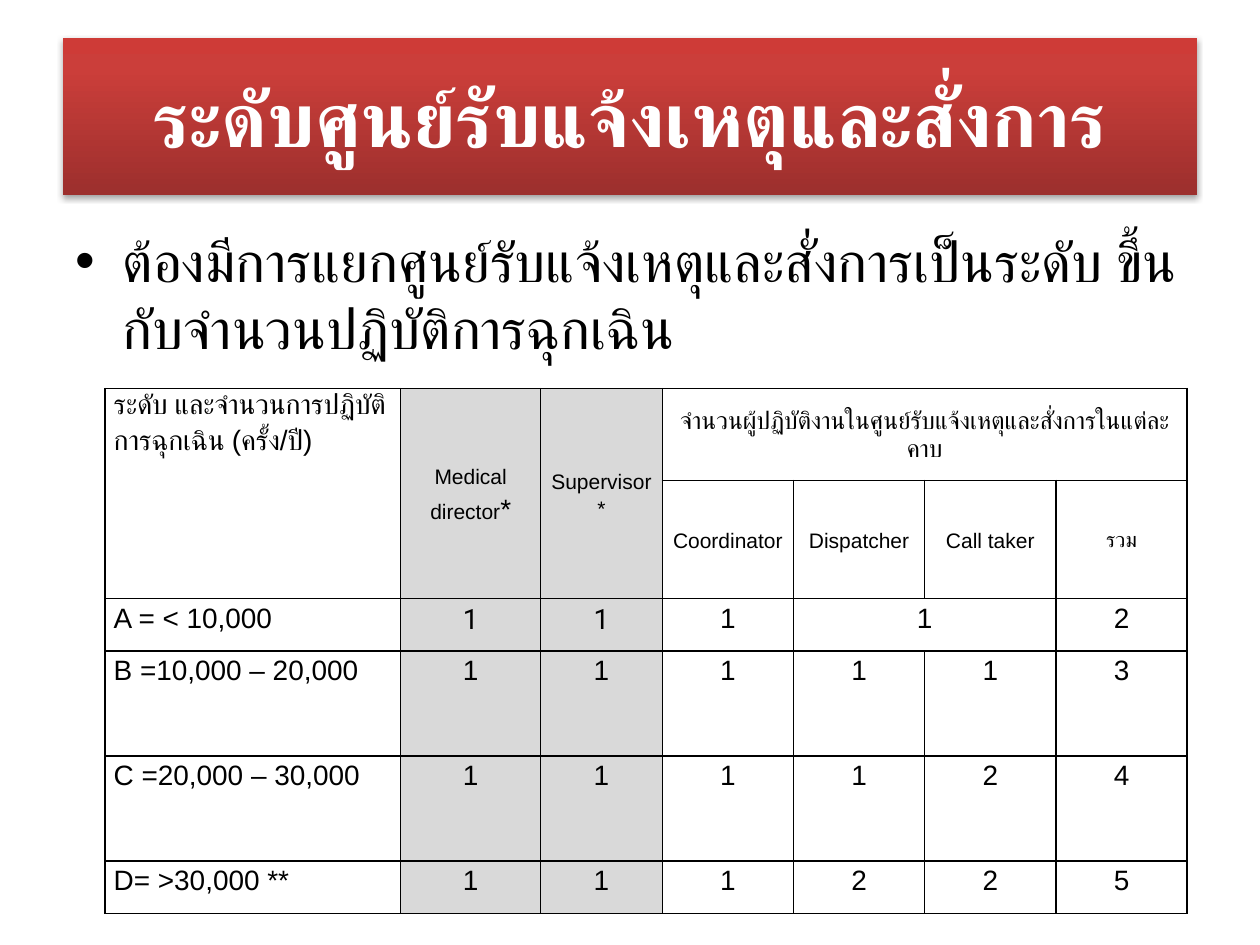
from lxml import etree
from pptx import Presentation
from pptx.dml.color import RGBColor
from pptx.enum.text import MSO_ANCHOR, PP_ALIGN
from pptx.oxml import parse_xml
from pptx.oxml.ns import nsdecls, qn
from pptx.util import Pt

LEFT, CENTER = PP_ALIGN.LEFT, PP_ALIGN.CENTER
TOP, MIDDLE = MSO_ANCHOR.TOP, MSO_ANCHOR.MIDDLE
COLORS = {"black": "000000", "white": "FFFFFF", "gray": "D9D9D9",
          "red_dark": "9C2F2D", "red": "CB3E3A", "red_light": "CE3B37"}


def add_run(p, text, size, font, color="black", bold=False):
    r = p.add_run()
    r.text = text
    for name, value in {"size": Pt(size), "name": font, "bold": bold}.items():
        setattr(r.font, name, value)
    r.font.color.rgb = RGBColor.from_string(COLORS[color])


def add_borders(cell):
    tcPr = cell._tc.get_or_add_tcPr()
    for side in ("lnL", "lnR", "lnT", "lnB"):
        tcPr.append(parse_xml(
            f'<a:{side} {nsdecls("a")} w="{Pt(1)}"><a:solidFill>'
            f'<a:srgbClr val="{COLORS["black"]}"/></a:solidFill></a:{side}>'))


prs = Presentation()
prs.slide_width, prs.slide_height = Pt(720), Pt(540)
s = prs.slides.add_slide(prs.slide_layouts[5])

title = s.shapes.title
for name, value in {"left": 36, "top": 21.6, "width": 648, "height": 90}.items():
    setattr(title, name, Pt(value))
stops = "".join(
    f'<a:gs pos="{pos * 1000}"><a:srgbClr val="{COLORS[color]}"/></a:gs>'
    for pos, color in ((0, "red_dark"), (80, "red"), (100, "red_light")))
spPr = title._element.spPr
spPr.append(parse_xml(
    f'<a:prstGeom {nsdecls("a")} prst="rect"><a:avLst/></a:prstGeom>'))
spPr.append(parse_xml(
    f'<a:gradFill {nsdecls("a")} rotWithShape="1"><a:gsLst>{stops}</a:gsLst>'
    '<a:lin ang="16200000" scaled="0"/></a:gradFill>'))
spPr.append(parse_xml(
    f'<a:effectLst {nsdecls("a")}><a:outerShdw blurRad="{Pt(3.1)}" dist="{Pt(1.8)}" '
    f'dir="5400000" rotWithShape="0"><a:srgbClr val="{COLORS["black"]}">'
    '<a:alpha val="35000"/></a:srgbClr></a:outerShdw></a:effectLst>'))
tf = title.text_frame
tf.vertical_anchor = MIDDLE
p = tf.paragraphs[0]
p.alignment = CENTER
add_run(p, "ระดับศูนย์รับแจ้งเหตุและสั่งการ", 44, "Calibri", "white", True)

body = s.shapes.add_textbox(Pt(36), Pt(126), Pt(648), Pt(356.4))
tf = body.text_frame
tf.word_wrap = True
p = tf.paragraphs[0]
p.space_before = Pt(6.4)
add_run(p, "ต้องมีการแยกศูนย์รับแจ้งเหตุและสั่งการเป็นระดับ ขึ้นกับจำนวนปฏิบัติการฉุกเฉิน",
        32, "Calibri")
pPr = p._p.get_or_add_pPr()
pPr.set("marL", str(Pt(27)))
pPr.set("indent", str(-Pt(27)))
etree.SubElement(pPr, qn("a:buFont")).set("typeface", "Arial")
etree.SubElement(pPr, qn("a:buChar")).set("char", "•")

widths = [169, 80, 69.5] + [75] * 4
heights = [52.5, 67.5, 30, 60, 60, 30]
frame = s.shapes.add_table(len(heights), len(widths), Pt(60), Pt(222),
                           Pt(sum(widths)), Pt(sum(heights)))
table = frame.table
table.first_row = table.horz_banding = False
for column, width in zip(table.columns, widths):
    column.width = Pt(width)
for row, height in zip(table.rows, heights):
    row.height = Pt(height)

headers = {
    (0, 0): [("ระดับ และจำนวนการปฏิบัติการฉุกเฉิน", 16, "Roboto"),
             (" (ครั้ง/ปี)", 16, "Arial")],
    (0, 1): [("Medical director", 12, "Arial"), ("*", 16, "Arial")],
    (0, 2): [("Supervisor*", 12, "Arial")],
    (0, 3): [("จำนวนผู้ปฏิบัติงานในศูนย์รับแจ้งเหตุและสั่งการในแต่ละคาบ", 14, "Roboto")],
    (1, 3): [("Coordinator", 12, "Arial")],
    (1, 4): [("Dispatcher", 12, "Arial")],
    (1, 5): [("Call taker", 12, "Arial")],
    (1, 6): [("รวม", 12, "Roboto")],
}
levels = [
    ("A = < 10,000", "1", "1", "1", "1", "", "2"),
    ("B =10,000 – 20,000", "1", "1", "1", "1", "1", "3"),
    ("C =20,000 – 30,000", "1", "1", "1", "1", "2", "4"),
    ("D= >30,000 **", "1", "1", "1", "2", "2", "5"),
]
contents = dict(headers)
for i, level in enumerate(levels, 2):
    for j, text in enumerate(level):
        if text:
            font = "Roboto" if i == 2 and j in (1, 2) else "Arial"
            contents[i, j] = [(text, 16, font)]

for first, last in (((0, 0), (1, 0)), ((0, 1), (1, 1)), ((0, 2), (1, 2)),
                    ((0, 3), (0, 6)), ((2, 4), (2, 5))):
    table.cell(*first).merge(table.cell(*last))

for i in range(len(heights)):
    for j in range(len(widths)):
        cell = table.cell(i, j)
        add_borders(cell)
        if j in (1, 2):
            cell.fill.solid()
            cell.fill.fore_color.rgb = RGBColor.from_string(COLORS["gray"])
        else:
            cell.fill.background()
        anchor = MIDDLE if i < 2 and j else TOP
        for name, value in {"margin_left": Pt(5), "margin_right": Pt(5), "margin_top": 0,
                            "margin_bottom": 0, "vertical_anchor": anchor}.items():
            setattr(cell, name, value)
        p = cell.text_frame.paragraphs[0]
        p.alignment = CENTER if j else LEFT
        p.line_spacing = 1.15
        for text, size, font in contents.get((i, j), []):
            add_run(p, text, size, font)

prs.save("out.pptx")
